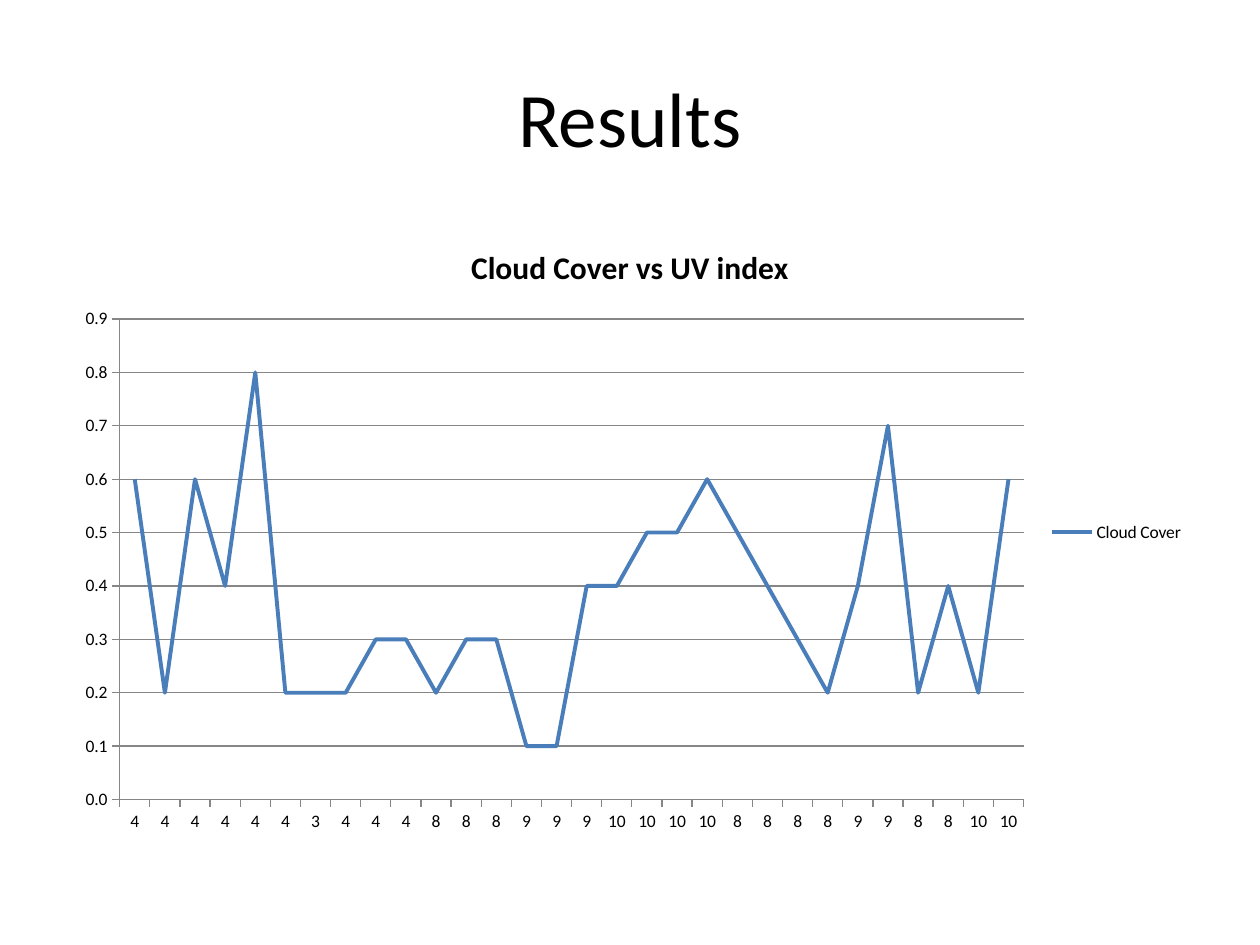
from pptx import Presentation
from pptx.chart.data import CategoryChartData
from pptx.dml.color import RGBColor as RGB
from pptx.enum.chart import XL_CHART_TYPE as CT, XL_LEGEND_POSITION as LP, XL_TICK_MARK as TM
from pptx.enum.text import MSO_ANCHOR, PP_ALIGN
from pptx.util import Inches, Pt

COLORS = {"text": "000000", "line": "4A7EBB", "axis": "868686"}
FONT = "Calibri"


def set_font(font, size, bold=False):
    font.name = FONT
    font.size = Pt(size)
    font.bold = bold
    font.color.rgb = RGB.from_string(COLORS["text"])


prs = Presentation()
prs.slide_width, prs.slide_height = Inches(10), Inches(7.5)
s = prs.slides.add_slide(prs.slide_layouts[6])

# Slide title
tf = s.shapes.add_textbox(Inches(0.5), Inches(0.3), Inches(9), Inches(1.25)).text_frame
tf.word_wrap = True
tf.vertical_anchor = MSO_ANCHOR.MIDDLE
p = tf.paragraphs[0]
p.text = "Results"
p.alignment = PP_ALIGN.CENTER
set_font(p.font, 44)

# Cloud cover readings, labelled by UV index
uv_index = [4, 4, 4, 4, 4, 4, 3, 4, 4, 4, 8, 8, 8, 9, 9,
            9, 10, 10, 10, 10, 8, 8, 8, 8, 9, 9, 8, 8, 10, 10]
cloud_cover = [0.6, 0.2, 0.6, 0.4, 0.8, 0.2, 0.2, 0.2, 0.3, 0.3,
               0.2, 0.3, 0.3, 0.1, 0.1, 0.4, 0.4, 0.5, 0.5, 0.6,
               0.5, 0.4, 0.3, 0.2, 0.4, 0.7, 0.2, 0.4, 0.2, 0.6]
data = CategoryChartData(number_format="0.0")
data.categories = [str(uv) for uv in uv_index]
data.add_series("Cloud Cover", cloud_cover)

# Line chart
chart = s.shapes.add_chart(CT.LINE, Inches(0.5), Inches(1.75),
                           Inches(9), Inches(4.95), data).chart
set_font(chart.font, 10)
chart.has_title = True
p = chart.chart_title.text_frame.paragraphs[0]
p.text = "Cloud Cover vs UV index"
set_font(p.font, 18, bold=True)
chart.chart_title.include_in_layout = False

chart.has_legend = True
chart.legend.position = LP.RIGHT
chart.legend.include_in_layout = False

plot = chart.plots[0]
plot.vary_by_categories = False
series = plot.series[0]
series.smooth = False
series.format.line.width = Pt(2.25)
series.format.line.color.rgb = RGB.from_string(COLORS["line"])

# Axes and gridlines
cat_axis, val_axis = chart.category_axis, chart.value_axis
val_axis.minimum_scale, val_axis.maximum_scale = 0, 0.9
val_axis.major_unit = 0.1
val_axis.has_major_gridlines = True
val_axis.tick_labels.number_format = "0.0"
val_axis.tick_labels.number_format_is_linked = False
for axis in (cat_axis, val_axis):
    axis.major_tick_mark = TM.OUTSIDE
    axis.minor_tick_mark = TM.NONE
for part in (cat_axis, val_axis, val_axis.major_gridlines):
    part.format.line.width = Pt(0.75)
    part.format.line.color.rgb = RGB.from_string(COLORS["axis"])

prs.save("out.pptx")
